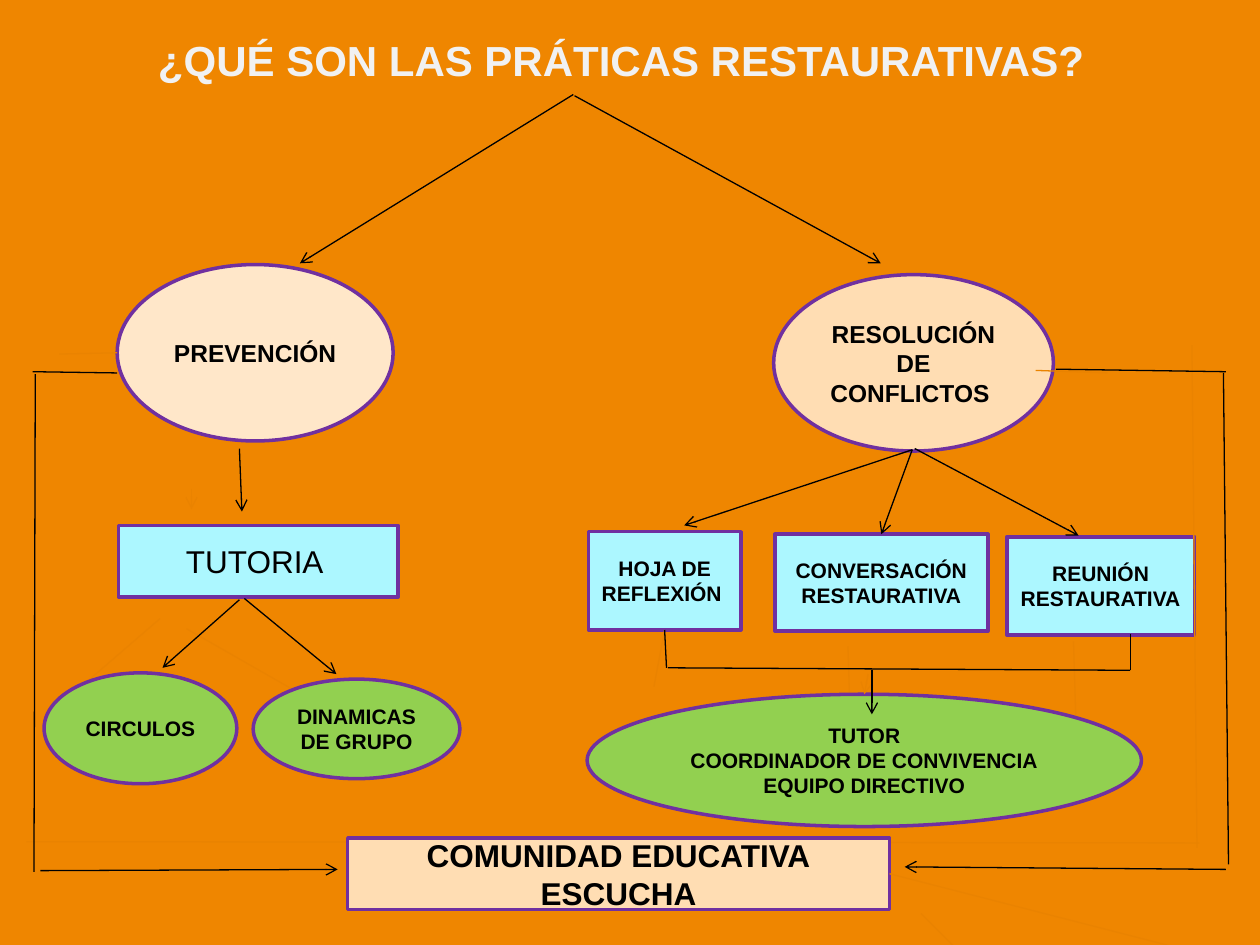
"""Builds a concept map of restorative practices."""
from typing import NamedTuple

from lxml import etree
from pptx import Presentation, util as u
from pptx.dml import color
from pptx.enum import shapes, text
from pptx.oxml import ns

BACK, FAINT, INK, EDGE = "EF8600", "EA8300", "000000", "7030A0"
PEACH, CREAM, AQUA, GREEN = "FFDDB3", "FFE7C9", "ACF7FF", "92D050"
OVAL = shapes.MSO_SHAPE.OVAL
RECT = shapes.MSO_SHAPE.RECTANGLE


class Node(NamedTuple):
    """A labelled shape."""
    name: str
    kind: int
    box: tuple
    fill: str
    rows: tuple
    size: int = 12
    bold: bool = True


class Link(NamedTuple):
    """A straight line, perhaps with an arrowhead and joined ends."""
    pts: tuple
    hue: str = INK
    head: bool = False
    start: tuple = ()
    end: tuple = ()


UPPER = [
    Node("solve", OVAL, (6.14, 2.18, 2.22, 1.4), PEACH, ("RESOLUCIÓN DE CONFLICTOS ",), 14),
    Node("prevent", OVAL, (0.93, 2.1, 2.19, 1.4), CREAM, ("PREVENCIÓN",), 14),
    Node("class", RECT, (0.94, 4.17, 2.22, 0.57), AQUA, ("TUTORIA ",), 18, False),
    Node("sheet", RECT, (4.67, 4.22, 1.21, 0.78), AQUA, ("HOJA DE REFLEXIÓN ",)),
    Node("talk", RECT, (6.15, 4.24, 1.69, 0.77), AQUA, ("CONVERSACIÓN RESTAURATIVA",)),
    Node("meet", RECT, (7.99, 4.26, 1.49, 0.78), AQUA, ("REUNIÓN RESTAURATIVA",)),
]
LOWER = [
    Node("rings", OVAL, (0.35, 5.34, 1.53, 0.88), GREEN, ("CIRCULOS ",)),
    Node("group", OVAL, (2.01, 5.39, 1.64, 0.79), GREEN, ("DINAMICAS DE GRUPO",)),
    Node("school", RECT, (2.76, 6.65, 4.3, 0.57), PEACH, ("COMUNIDAD EDUCATIVA", "ESCUCHA"), 18),
    Node("team", OVAL, (4.66, 5.51, 4.4, 1.05), GREEN,
         ("TUTOR", "COORDINADOR DE CONVIVENCIA", "EQUIPO DIRECTIVO")),
]
UNDER = [
    Link((1.52, 3.88, 1.52, 4.04), FAINT, True),
    Link((1.27, 4.91, 0.54, 5.54), FAINT, True),
    Link((1.48, 4.99, 2.53, 5.59), FAINT, True),
    Link((5.27, 5, 5.19, 5.45), FAINT, start=("sheet", 2)),
    Link((6.73, 5.13, 6.75, 5.78), FAINT),
    Link((8.52, 5.09, 8.54, 5.75), FAINT),
    Link((0.93, 2.8, 0.47, 2.81), FAINT),
    Link((8.79, 2.96, 8.22, 2.94), FAINT),
    Link((9.46, 2.74, 9.5, 6.73), FAINT),
    Link((0.21, 6.68, 9.52, 6.69), FAINT),
]
OVER = [
    Link((4.55, 0.75, 2.38, 2.09), head=True),
    Link((4.56, 0.76, 6.99, 2.09), head=True),
    Link((0.28, 2.97, 0.27, 6.92)),
    Link((0.93, 2.96, 0.26, 2.95)),
    Link((8.38, 2.93, 9.73, 2.95)),
    Link((9.71, 2.96, 9.75, 6.86)),
    Link((7.06, 6.93, 10.74, 7.88), FAINT, True, start=("school", 3)),
    Link((9.73, 6.9, 7.18, 6.88), head=True),
    Link((7.31, 7.25, 8.31, 8.25), FAINT, True),
    Link((0.32, 6.91, 2.68, 6.9), head=True),
    Link((1.9, 3.56, 1.92, 4.06), head=True),
    Link((1.9, 4.76, 1.29, 5.3), head=True),
    Link((1.94, 4.75, 2.67, 5.35), head=True),
    Link((7.24, 3.57, 5.43, 4.17), head=True),
    Link((7.24, 3.57, 7, 4.24), head=True, end=("talk", 0)),
    Link((7.26, 3.56, 8.56, 4.25), head=True),
    Link((5.27, 5, 5.29, 5.3), start=("sheet", 2)),
    Link((5.3, 5.3, 8.97, 5.32)),
    Link((8.97, 5.03, 8.97, 5.32)),
    Link((6.89, 5.35, 6.86, 5.51), FAINT, True),
    Link((6.92, 5.32, 6.92, 5.67), head=True),
]


def paint(form, hue: str) -> None:
    """Gives a fill format one solid colour."""
    form.solid()
    form.fore_color.rgb = color.RGBColor.from_string(hue)


def write(frame, rows: tuple, size: int, hue: str, bold: bool) -> None:
    """Writes centred rows, one paragraph each."""
    for i, row in enumerate(rows):
        para = frame.add_paragraph() if i else frame.paragraphs[0]
        para.alignment = text.PP_ALIGN.CENTER
        run = para.add_run()
        run.text = row
        run.font.name, run.font.size, run.font.bold = "Arial", u.Pt(size), bold
        paint(run.font.fill, hue)


def place(slide, node: Node):
    """Draws a node and returns its shape."""
    shape = slide.shapes.add_shape(node.kind, *map(u.Inches, node.box))
    shape.shadow.inherit = False
    paint(shape.fill, node.fill)
    paint(shape.line.fill, EDGE)
    shape.line.width = u.Pt(2)
    frame = shape.text_frame
    frame.word_wrap = True
    frame.vertical_anchor = text.MSO_ANCHOR.MIDDLE
    write(frame, node.rows, node.size, INK, node.bold)
    return shape


def join(slide, link: Link, made: dict) -> None:
    """Draws a link and joins it to its nodes."""
    line = slide.shapes.add_connector(
        shapes.MSO_CONNECTOR.STRAIGHT, *map(u.Inches, link.pts))
    paint(line.line.fill, link.hue)
    line.line.width = u.Pt(0.75)
    if link.head:
        etree.SubElement(line.line._get_or_add_ln(), ns.qn("a:tailEnd"), type="arrow")
    etree.SubElement(line._element.spPr, ns.qn("a:effectLst"))
    if link.start:
        line.begin_connect(made[link.start[0]], link.start[1])
    if link.end:
        line.end_connect(made[link.end[0]], link.end[1])


def head(slide) -> None:
    """Fills the title placeholder with outlined text."""
    title = slide.shapes.title
    title.left, title.top, title.width, title.height = map(u.Inches, (1.12, 0.22, 7.62, 0.5))
    frame = title.text_frame
    frame.word_wrap = False
    frame.auto_size = text.MSO_AUTO_SIZE.SHAPE_TO_FIT_TEXT
    frame.vertical_anchor = text.MSO_ANCHOR.TOP
    write(frame, ("¿QUÉ SON LAS PRÁTICAS RESTAURATIVAS?",), 24, "F1F1F1", True)
    edge = etree.Element(ns.qn("a:ln"), w=str(u.Pt(1)))
    solid = etree.SubElement(edge, ns.qn("a:solidFill"))
    etree.SubElement(solid, ns.qn("a:srgbClr"), val="595959")
    frame.paragraphs[0].runs[0]._r.get_or_add_rPr().insert(0, edge)


def main() -> None:
    """Builds and saves the slide."""
    deck = Presentation()
    deck.slide_width, deck.slide_height = u.Inches(10), u.Inches(7.5)
    slide = deck.slides.add_slide(deck.slide_layouts[5])
    paint(slide.background.fill, BACK)
    head(slide)
    made = {}
    for nodes, links in ((UPPER, UNDER), (LOWER, OVER)):
        for node in nodes:
            made[node.name] = place(slide, node)
        for link in links:
            join(slide, link, made)
    deck.save("out.pptx")


if __name__ == "__main__":
    main()
